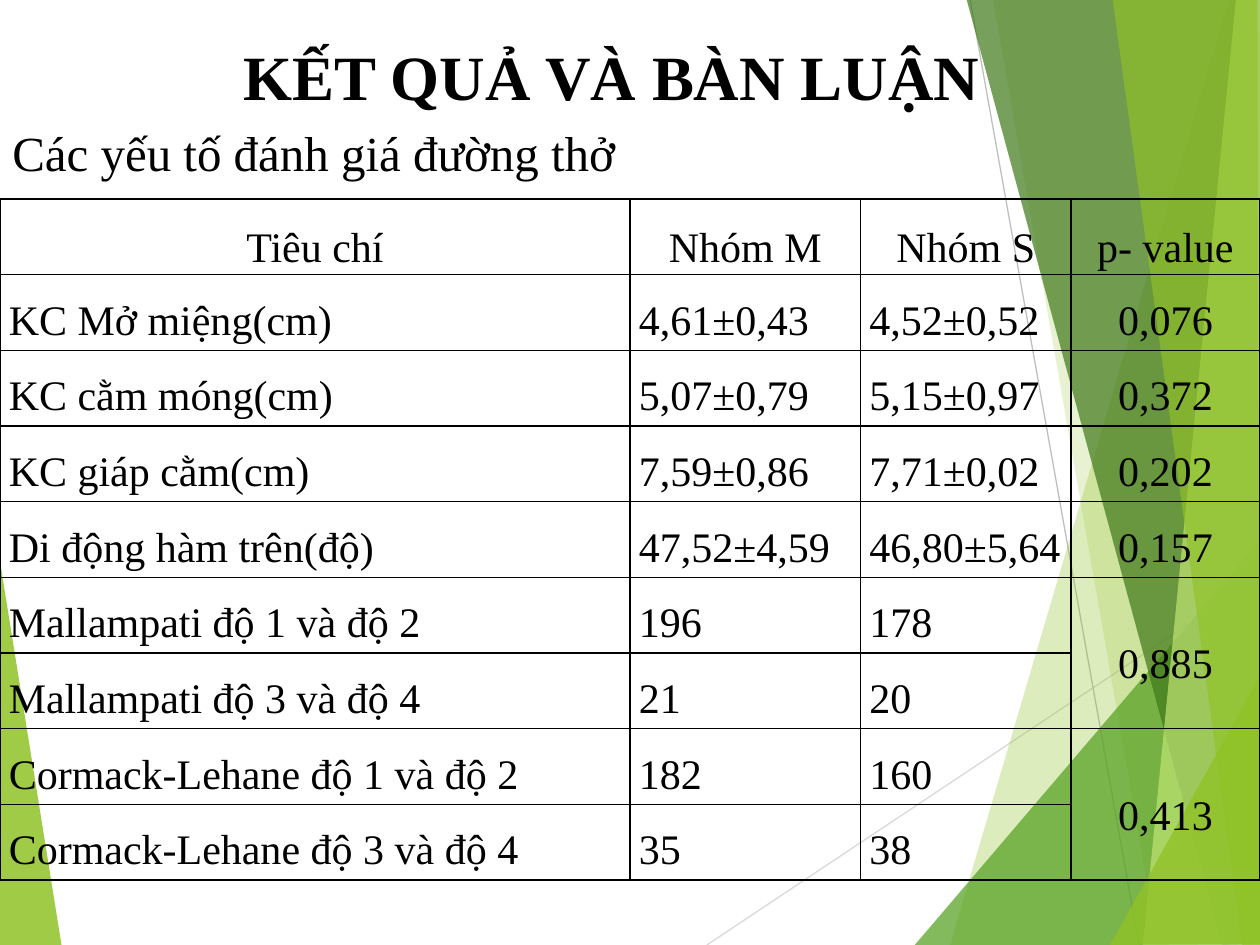
from collections import namedtuple
from dataclasses import dataclass

from lxml.etree import SubElement
from pptx import Presentation
from pptx.dml.color import RGBColor
from pptx.enum.shapes import MSO_CONNECTOR
from pptx.enum.text import MSO_ANCHOR, MSO_AUTO_SIZE, PP_ALIGN
from pptx.oxml.ns import qn
from pptx.util import Inches, Pt

Box = namedtuple("Box", "left top width height")


@dataclass(frozen=True)
class Theme:
    font: str = "Times New Roman"
    text: str = "000000"
    background: str = "FFFFFF"
    lime: str = "90C226"
    green: str = "54A021"
    forest: str = "3F7819"
    pale: str = "C0E474"
    light_line: str = "D9D9D9"
    mid_line: str = "BFBFBF"
    title_size: int = 36
    subtitle_size: int = 28
    table_size: int = 24
    hairline: float = 0.75
    border: float = 1


THEME = Theme()

LEFT_FACET = (THEME.lime, 85, [(-0.01, 4.39), (0.49, 7.51), (-0.01, 7.5)])
RAYS = [
    (THEME.light_line, (5.61, 7.5), (10.01, 4.57)),
    (THEME.mid_line, (7.7, 0), (9.04, 7.5)),
]
RIGHT_FACETS = [
    (THEME.lime, 30, [(9.75, 0), (7.54, 7.5), (10.02, 7.51), (10.01, 0.01)]),
    (THEME.lime, 20, [(7.88, -0.01), (9.19, 7.5), (10.01, 7.5), (10.01, -0.01)]),
    (THEME.green, 72, [(7.26, 7.5), (10, 4.29), (10.01, 7.5)]),
    (THEME.forest, 70, [(7.67, -0.01), (9.7, 7.5), (10.01, 7.49), (10.01, -0.01)]),
    (THEME.pale, 70, [(9.81, -0.01), (9.07, 7.5), (10.01, 7.5), (10, -0.01)]),
    (THEME.lime, 65, [(8.83, -0.01), (9.86, 7.5), (10, 7.5), (9.98, -0.01)]),
    (THEME.lime, 80, [(8.81, 7.5), (10.01, 5.35), (10.01, 7.49)]),
]

COLUMN_WIDTHS = [5, 1.83, 1.67, 1.5]
ROWS = [
    ("Tiêu chí", "Nhóm M", "Nhóm S", "p- value"),
    ("KC Mở miệng(cm)", "4,61±0,43", "4,52±0,52", "0,076"),
    ("KC cằm móng(cm)", "5,07±0,79", "5,15±0,97", "0,372"),
    ("KC giáp cằm(cm)", "7,59±0,86", "7,71±0,02", "0,202"),
    ("Di động hàm trên(độ)", "47,52±4,59", "46,80±5,64", "0,157"),
    ("Mallampati độ 1 và độ 2", "196", "178", "0,885"),
    ("Mallampati độ 3 và độ 4", "21", "20", None),
    ("Cormack-Lehane độ 1 và độ 2", "182", "160", "0,413"),
    ("Cormack-Lehane độ 3 và độ 4", "35", "38", None),
]


def add_run(p, text, size, bold=False):
    r = p.add_run()
    r.text = text
    r.font.name = THEME.font
    r.font.size = Pt(size)
    r.font.bold = bold
    r.font.color.rgb = RGBColor.from_string(THEME.text)


def add_facet(s, box, color, opacity, points):
    corners = [(box.left + Inches(x), box.top + Inches(y)) for x, y in points]
    builder = s.shapes.build_freeform(*corners[0])
    builder.add_line_segments(corners[1:], close=True)
    sp = builder.convert_to_shape()
    sp.shadow.inherit = False
    sp.line.fill.background()
    sp.fill.solid()
    sp.fill.fore_color.rgb = RGBColor.from_string(color)
    clr = sp.element.spPr.find(qn("a:solidFill"))[0]
    SubElement(clr, qn("a:alpha"), val=str(opacity * 1000))


def add_ray(s, box, color, start, end):
    ends = [origin + Inches(v) for point in (start, end)
            for origin, v in zip((box.left, box.top), point)]
    ray = s.shapes.add_connector(MSO_CONNECTOR.STRAIGHT, *ends)
    ray.line.color.rgb = RGBColor.from_string(color)
    ray.line.width = Pt(THEME.hairline)
    SubElement(ray.element.spPr, qn("a:effectLst"))


def add_backdrop(s, box):
    s.background.fill.solid()
    s.background.fill.fore_color.rgb = RGBColor.from_string(THEME.background)
    add_facet(s, box, *LEFT_FACET)
    for ray in RAYS:
        add_ray(s, box, *ray)
    for facet in RIGHT_FACETS:
        add_facet(s, box, *facet)


def fill_heading(sp, box, text, size, bold=False):
    sp.left, sp.top, sp.width, sp.height = box
    tf = sp.text_frame
    tf.word_wrap = False
    tf.auto_size = MSO_AUTO_SIZE.SHAPE_TO_FIT_TEXT
    tf.vertical_anchor = MSO_ANCHOR.TOP
    p = tf.paragraphs[0]
    p.alignment = PP_ALIGN.LEFT
    add_run(p, text, size, bold)


def add_title(s, box):
    title = s.shapes.title
    title.element.getparent().append(title.element)
    fill_heading(title, box, "KẾT QUẢ VÀ BÀN LUẬN", THEME.title_size, bold=True)


def add_subtitle(s, box):
    sp = s.shapes.add_textbox(*box)
    fill_heading(sp, box, "Các yếu tố đánh giá đường thở", THEME.subtitle_size)


def format_cell(cell):
    cell.margin_left = cell.margin_right = Inches(0.07)
    cell.margin_top = cell.margin_bottom = 0
    tcPr = cell._tc.get_or_add_tcPr()
    for side in ("lnL", "lnR", "lnT", "lnB"):
        ln = SubElement(tcPr, qn(f"a:{side}"), w=str(Pt(THEME.border)))
        fill = SubElement(ln, qn("a:solidFill"))
        SubElement(fill, qn("a:srgbClr"), val=THEME.text)
    cell.fill.background()


def add_results_table(s, box):
    table = s.shapes.add_table(len(ROWS), len(COLUMN_WIDTHS), *box).table
    table.first_row = table.horz_banding = False
    for column, width in zip(table.columns, COLUMN_WIDTHS):
        column.width = int(box.width * width / sum(COLUMN_WIDTHS))
    last = len(COLUMN_WIDTHS) - 1
    for i, values in enumerate(ROWS):
        table.rows[i].height = box.height // len(ROWS)
        for j, text in enumerate(values):
            cell = table.cell(i, j)
            format_cell(cell)
            if text is None:
                above = table.cell(i - 1, j)
                above.merge(cell)
                above.vertical_anchor = MSO_ANCHOR.MIDDLE
                continue
            cell.vertical_anchor = MSO_ANCHOR.MIDDLE if i == 0 else MSO_ANCHOR.TOP
            p = cell.text_frame.paragraphs[0]
            centred = i == 0 or j == last
            p.alignment = PP_ALIGN.CENTER if centred else PP_ALIGN.JUSTIFY
            p.line_spacing = 1.5
            add_run(p, text, THEME.table_size)


def main():
    prs = Presentation()
    prs.slide_width, prs.slide_height = Inches(10), Inches(7.5)
    s = prs.slides.add_slide(prs.slide_layouts.get_by_name("Title Only"))
    add_backdrop(s, Box(0, 0, prs.slide_width, prs.slide_height))
    add_title(s, Box(Inches(1.83), Inches(0.25), Inches(6.1), Inches(0.71)))
    add_subtitle(s, Box(0, Inches(0.92), Inches(5.03), Inches(0.57)))
    add_results_table(s, Box(0, Inches(1.58), prs.slide_width, Inches(5.4)))
    prs.save("out.pptx")


if __name__ == "__main__":
    main()
